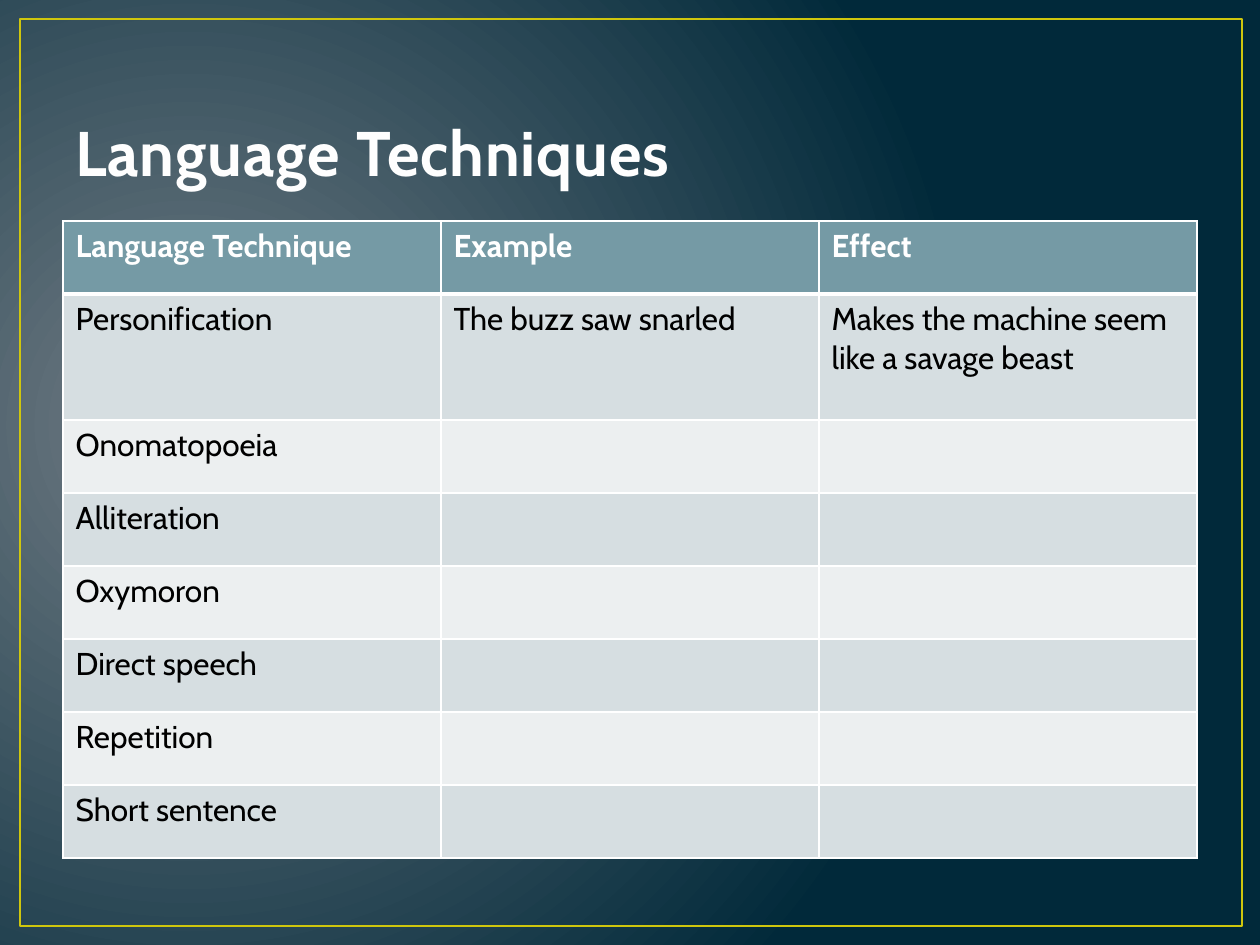
import lxml.etree
import pptx
import pptx.dml.color
import pptx.enum.shapes
import pptx.enum.text
import pptx.oxml.ns
import pptx.util

PX = 914400 / 126
FONT = "Cabin"
COLORS = {
    "glow": "717C84", "night": "01293A", "frame": "CFC60D", "title": "FEFEFE",
    "header": "759AA5", "dark_band": "D6DEE1", "light_band": "ECEFF0",
    "white": "FFFFFF", "black": "000000",
}
ROWS = [
    ["Language Technique", "Example", "Effect"],
    ["Personification", "The buzz saw snarled", "Makes the machine seem like a savage beast"],
    ["Onomatopoeia"],
    ["Alliteration"],
    ["Oxymoron"],
    ["Direct speech"],
    ["Repetition"],
    ["Short sentence"],
]
ROW_HEIGHTS = [73, 126] + [73] * 6


def emu(*lengths):
    """Turn px lengths into EMU."""
    return [pptx.util.Emu(round(n * PX)) for n in lengths]


def rgb(name):
    """Look up a named colour."""
    return pptx.dml.color.RGBColor.from_string(COLORS[name])


def add_sub(parent, tag, **attrs):
    """Append a namespaced XML element."""
    return lxml.etree.SubElement(parent, pptx.oxml.ns.qn(tag), attrs)


def style(p, size, color, bold):
    """Set the font of a paragraph."""
    p.font.name = FONT
    p.font.size = pptx.util.Pt(size)
    p.font.bold = bold
    p.font.color.rgb = rgb(color)


def set_background(s):
    """Fill the slide with a radial glow from the left."""
    fill = s.background.fill
    fill.gradient()
    for stop, name, position in zip(fill.gradient_stops, ("glow", "night"), (0, 1)):
        stop.color.rgb = rgb(name)
        stop.position = position
    grad = s.element.xpath(".//p:bgPr/a:gradFill")[0]
    grad.remove(grad.find(pptx.oxml.ns.qn("a:lin")))
    circle = add_sub(grad, "a:path", path="circle")
    add_sub(circle, "a:fillToRect", l="15000", t="50000", r="85000", b="60000")


def add_frame(s, x, y, w, h):
    """Draw the thin border around the slide."""
    sp = s.shapes.add_shape(pptx.enum.shapes.MSO_SHAPE.RECTANGLE, *emu(x, y, w, h))
    sp.shadow.inherit = False
    sp.fill.background()
    sp.line.color.rgb = rgb("frame")
    sp.line.width = pptx.util.Pt(1.5)


def add_title(s, x, y, w, h, text):
    """Place the title at the bottom of its box."""
    tf = s.shapes.add_textbox(*emu(x, y, w, h)).text_frame
    tf.word_wrap = True
    tf.vertical_anchor = pptx.enum.text.MSO_ANCHOR.BOTTOM
    p = tf.paragraphs[0]
    r = p.add_run()
    r.text = text
    style(p, 36, "title", True)
    r.font._element.set("spc", "50")


def set_borders(cell, bottom, top):
    """Give a cell white borders, ahead of its fill."""
    tc_pr = cell._tc.get_or_add_tcPr()
    widths = {"a:lnL": 1, "a:lnR": 1, "a:lnT": top, "a:lnB": bottom}
    for i, (tag, width) in enumerate(widths.items()):
        ln = add_sub(tc_pr, tag, w=str(pptx.util.Pt(width)))
        add_sub(add_sub(ln, "a:solidFill"), "a:srgbClr", val=COLORS["white"])
        tc_pr.insert(i, ln)


def add_techniques(s, x, y, w):
    """Build the banded table of language techniques."""
    cols = len(ROWS[0])
    box = emu(x, y, w, sum(ROW_HEIGHTS))
    table = s.shapes.add_table(len(ROWS), cols, *box).table
    for column in table.columns:
        column.width = emu(w / cols)[0]
    for i, (texts, height) in enumerate(zip(ROWS, ROW_HEIGHTS)):
        table.rows[i].height = emu(height)[0]
        header = i == 0
        band = "header" if header else "dark_band" if i % 2 else "light_band"
        for j in range(cols):
            cell = table.cell(i, j)
            cell.fill.solid()
            cell.fill.fore_color.rgb = rgb(band)
            set_borders(cell, 3 if header else 1, 3 if i == 1 else 1)
            if j < len(texts):
                cell.text = texts[j]
                style(cell.text_frame.paragraphs[0], 18,
                      "white" if header else "black", header)


def main():
    """Build and save the slide."""
    prs = pptx.Presentation()
    prs.slide_width, prs.slide_height = emu(1260, 945)
    s = prs.slides.add_slide(prs.slide_layouts[6])
    set_background(s)
    add_frame(s, 20, 19, 1222, 907)
    add_title(s, 63, 38, 1134, 157, "Language Techniques")
    add_techniques(s, 63, 221, 1134)
    prs.save("out.pptx")


if __name__ == "__main__":
    main()
